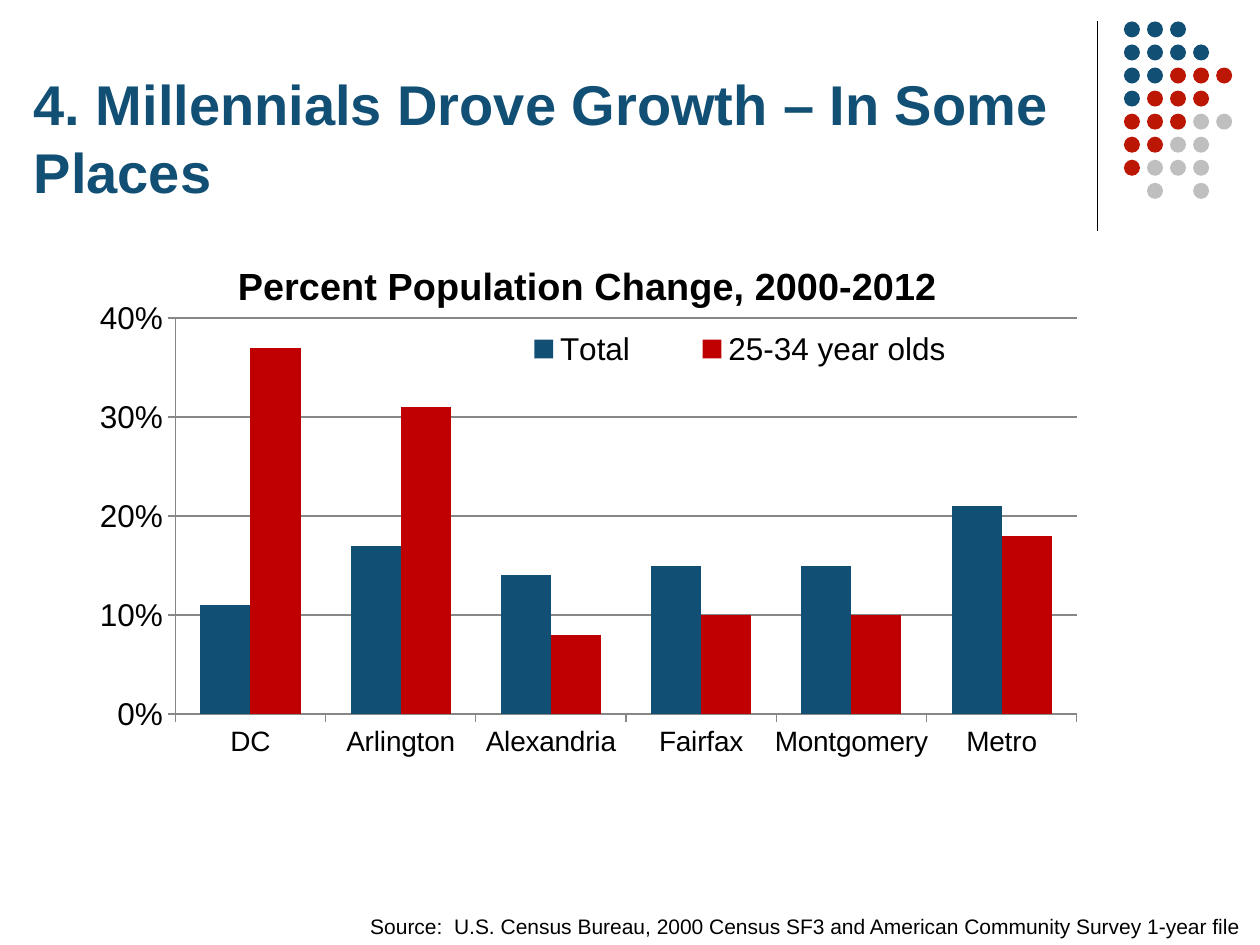
"""Build a slide on population change with a clustered column chart and a dot motif."""
from dataclasses import dataclass

from lxml.etree import SubElement
from pptx import Presentation
from pptx.chart.data import CategoryChartData
from pptx.dml.color import RGBColor
from pptx.enum.chart import XL_CHART_TYPE, XL_LEGEND_POSITION, XL_TICK_MARK
from pptx.enum.shapes import MSO_CONNECTOR, MSO_SHAPE
from pptx.enum.text import MSO_ANCHOR
from pptx.oxml.ns import qn
from pptx.util import Inches, Pt

CLUSTERED = XL_CHART_TYPE.COLUMN_CLUSTERED
LEGEND_RIGHT = XL_LEGEND_POSITION.RIGHT
TICK_OUTSIDE = XL_TICK_MARK.OUTSIDE
STRAIGHT = MSO_CONNECTOR.STRAIGHT
ELLIPSE = MSO_SHAPE.OVAL
TOP, BOTTOM = MSO_ANCHOR.TOP, MSO_ANCHOR.BOTTOM

SLIDE_WIDTH, SLIDE_HEIGHT = Inches(10), Inches(7.5)
COLUMNS, ROWS = 100, 75


@dataclass(frozen=True)
class Theme:
    """Colours, font and type sizes of the slide."""
    font: str = "Arial"
    navy: str = "124F74"
    red: str = "BC1604"
    silver: str = "BFBFBF"
    crimson: str = "C00000"
    black: str = "000000"
    grey: str = "878787"
    heading: float = 32
    chart_title: float = 21.6
    chart: float = 18
    category: float = 16
    source: float = 12


@dataclass(frozen=True)
class Box:
    """A rectangle in grid columns and rows."""
    left: float
    top: float
    width: float
    height: float

    def lengths(self) -> tuple[int, int, int, int]:
        """Return left, top, width and height as slide lengths."""
        return column(self.left), row(self.top), column(self.width), row(self.height)


@dataclass(frozen=True)
class Series:
    """One data series of the chart."""
    name: str
    values: tuple[float, ...]
    color: str


THEME = Theme()
PLACES = ("DC", "Arlington", "Alexandria", "Fairfax", "Montgomery", "Metro")
GROWTH = (
    Series("Total", (0.11, 0.17, 0.14, 0.15, 0.15, 0.21), THEME.navy),
    Series("25-34 year olds", (0.37, 0.31, 0.08, 0.1, 0.1, 0.18), THEME.crimson),
)
DOT_COLORS = {"N": THEME.navy, "R": THEME.red, "S": THEME.silver}
DOT_ROWS = ("NNN", "NNNN", "NNRRR", "NRRR", "RRRSS", "RRSS", "RSSS", ".S.S")
DOT_LEFT, DOT_TOP, DOT_PITCH, DOT_SIZE = 89.2, 1.7, 1.83, 1.27


def column(count: float) -> int:
    """Convert grid columns to a length."""
    return round(SLIDE_WIDTH * count / COLUMNS)


def row(count: float) -> int:
    """Convert grid rows to a length."""
    return round(SLIDE_HEIGHT * count / ROWS)


def style_font(font, size: float, color: str = THEME.black, bold: bool = False) -> None:
    """Apply typeface, size, colour and weight."""
    font.name, font.size, font.bold = THEME.font, Pt(size), bold
    font.color.rgb = RGBColor.from_string(color)


def add_text(slide, text: str, box: Box, *, size: float, color: str = THEME.black,
             bold: bool = False, anchor=TOP, wrap: bool = True) -> None:
    """Add a text box with one formatted run."""
    frame = slide.shapes.add_textbox(*box.lengths()).text_frame
    frame.word_wrap, frame.vertical_anchor = wrap, anchor
    run = frame.paragraphs[0].add_run()
    run.text = text
    style_font(run.font, size, color, bold)


def add_divider(slide, across: float, top: float, bottom: float) -> None:
    """Draw a vertical rule."""
    rule = slide.shapes.add_connector(
        STRAIGHT, column(across), row(top), column(across), row(bottom))
    rule.line.color.rgb = RGBColor.from_string(THEME.black)
    rule.line.width = Pt(0.75)
    SubElement(rule._element.spPr, qn("a:effectLst"))


def add_dots(slide) -> None:
    """Draw the dot motif from its row patterns."""
    group = slide.shapes.add_group_shape()
    for line, pattern in enumerate(DOT_ROWS):
        for position, key in enumerate(pattern):
            if key not in DOT_COLORS:
                continue
            box = Box(DOT_LEFT + position * DOT_PITCH, DOT_TOP + line * DOT_PITCH,
                      DOT_SIZE, DOT_SIZE)
            dot = group.shapes.add_shape(ELLIPSE, *box.lengths())
            dot.shadow.inherit = False
            dot.fill.solid()
            dot.fill.fore_color.rgb = RGBColor.from_string(DOT_COLORS[key])
            dot.line.fill.background()


def place_part(part, **shares: float) -> None:
    """Place a chart part by shares of the chart's size."""
    layout = part.find(qn("c:layout"))
    if layout is None:
        layout = part.makeelement(qn("c:layout"))
        part.insert(0, layout)
    manual = SubElement(layout, qn("c:manualLayout"))
    if part.tag == qn("c:plotArea"):
        SubElement(manual, qn("c:layoutTarget")).set("val", "inner")
    for side in ("x", "y"):
        SubElement(manual, qn(f"c:{side}Mode")).set("val", "edge")
    for side, share in shares.items():
        SubElement(manual, qn(f"c:{side}")).set("val", str(share))


def style_axis(axis, size: float) -> None:
    """Format an axis line, its ticks and its labels."""
    axis.major_tick_mark = TICK_OUTSIDE
    axis.format.line.color.rgb = RGBColor.from_string(THEME.grey)
    axis.format.line.width = Pt(0.75)
    style_font(axis.tick_labels.font, size)


def add_growth_chart(slide, box: Box) -> None:
    """Add the clustered column chart of population change."""
    data = CategoryChartData(number_format="0%")
    data.categories = PLACES
    for series in GROWTH:
        data.add_series(series.name, series.values)
    chart = slide.shapes.add_chart(CLUSTERED, *box.lengths(), data).chart
    style_font(chart.font, THEME.chart)

    chart.has_title = True
    heading = chart.chart_title.text_frame.paragraphs[0].add_run()
    heading.text = "Percent Population Change, 2000-2012"
    style_font(heading.font, THEME.chart_title, bold=True)
    title = chart.chart_title._element
    title.find(qn("c:overlay")).set("val", "1")
    place_part(title, x=0.16, y=0.02)

    chart.has_legend = True
    chart.legend.position = LEGEND_RIGHT
    chart.legend.include_in_layout = False
    style_font(chart.legend.font, THEME.chart)
    place_part(chart.legend._element, x=0.39, y=0.12, w=0.51, h=0.08)

    plot = chart.plots[0]
    plot.gap_width, plot.overlap, plot.vary_by_categories = 100, 0, False
    place_part(plot._element.getparent(), x=0.107, y=0.114, w=0.859, h=0.592)
    for drawn, series in zip(plot.series, GROWTH):
        drawn.format.fill.solid()
        drawn.format.fill.fore_color.rgb = RGBColor.from_string(series.color)

    style_axis(chart.category_axis, THEME.category)
    percent = chart.value_axis
    style_axis(percent, THEME.chart)
    percent.minimum_scale, percent.maximum_scale, percent.major_unit = 0, 0.4, 0.1
    percent.tick_labels.number_format = "0%"
    percent.tick_labels.number_format_is_linked = False
    percent.has_major_gridlines = True
    percent.major_gridlines.format.line.color.rgb = RGBColor.from_string(THEME.grey)


def main() -> None:
    """Compose and save the slide."""
    deck = Presentation()
    deck.slide_width, deck.slide_height = SLIDE_WIDTH, SLIDE_HEIGHT
    slide = deck.slides.add_slide(deck.slide_layouts[6])
    add_divider(slide, 87.1, 1.7, 18.3)
    add_dots(slide)
    add_text(slide, "4. Millennials Drove Growth – In Some Places", Box(1.7, 2.5, 83, 14.2),
             size=THEME.heading, color=THEME.navy, bold=True, anchor=BOTTOM)
    add_text(slide, "Source:  U.S. Census Bureau, 2000 Census SF3 and American Community "
             "Survey 1-year file", Box(28.4, 72, 71.6, 3), size=THEME.source, wrap=False)
    add_growth_chart(slide, Box(5, 19.2, 83.3, 53.1))
    deck.save("out.pptx")


if __name__ == "__main__":
    main()
